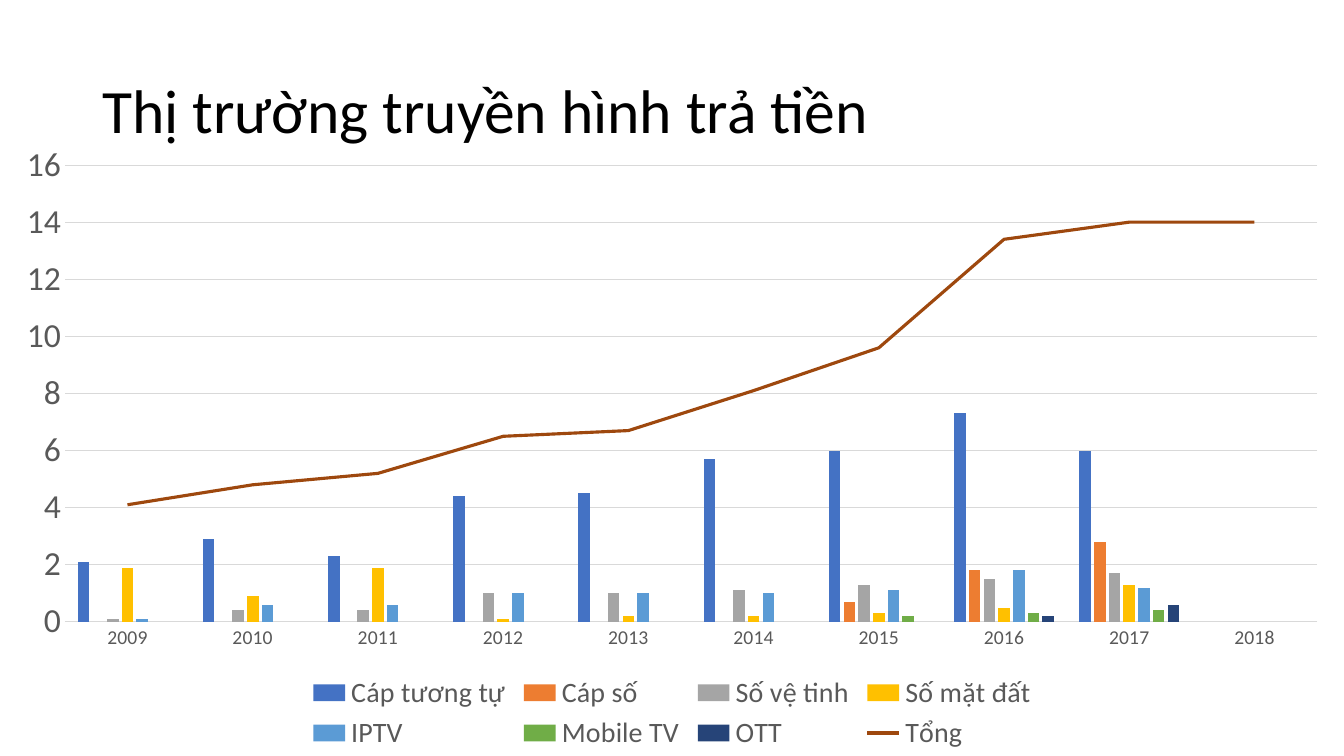
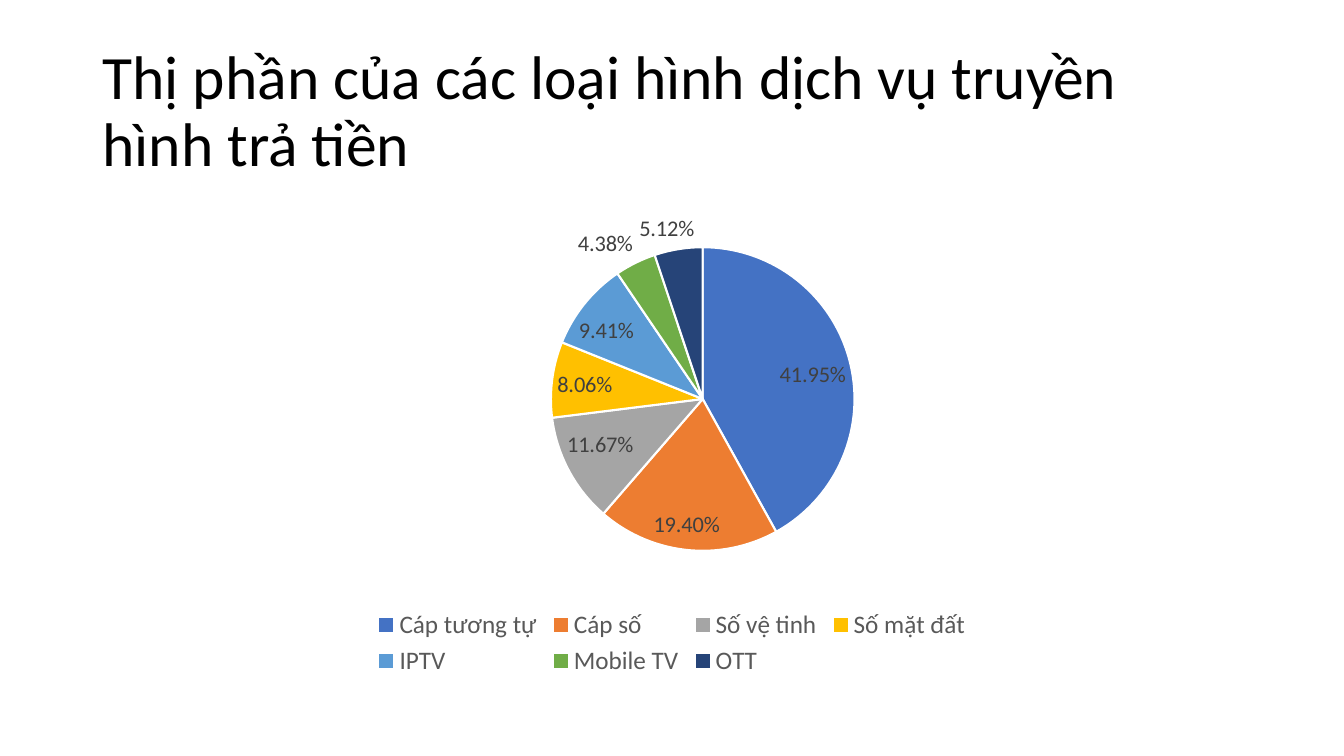
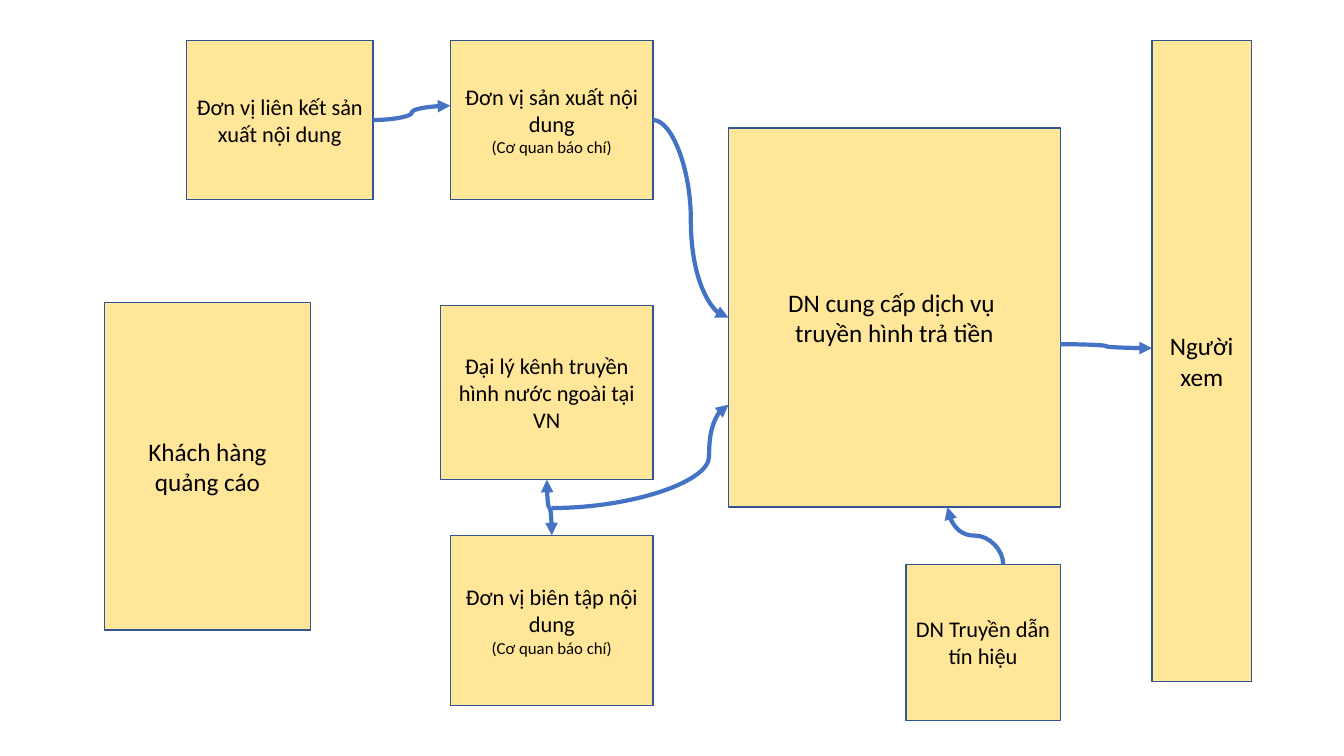
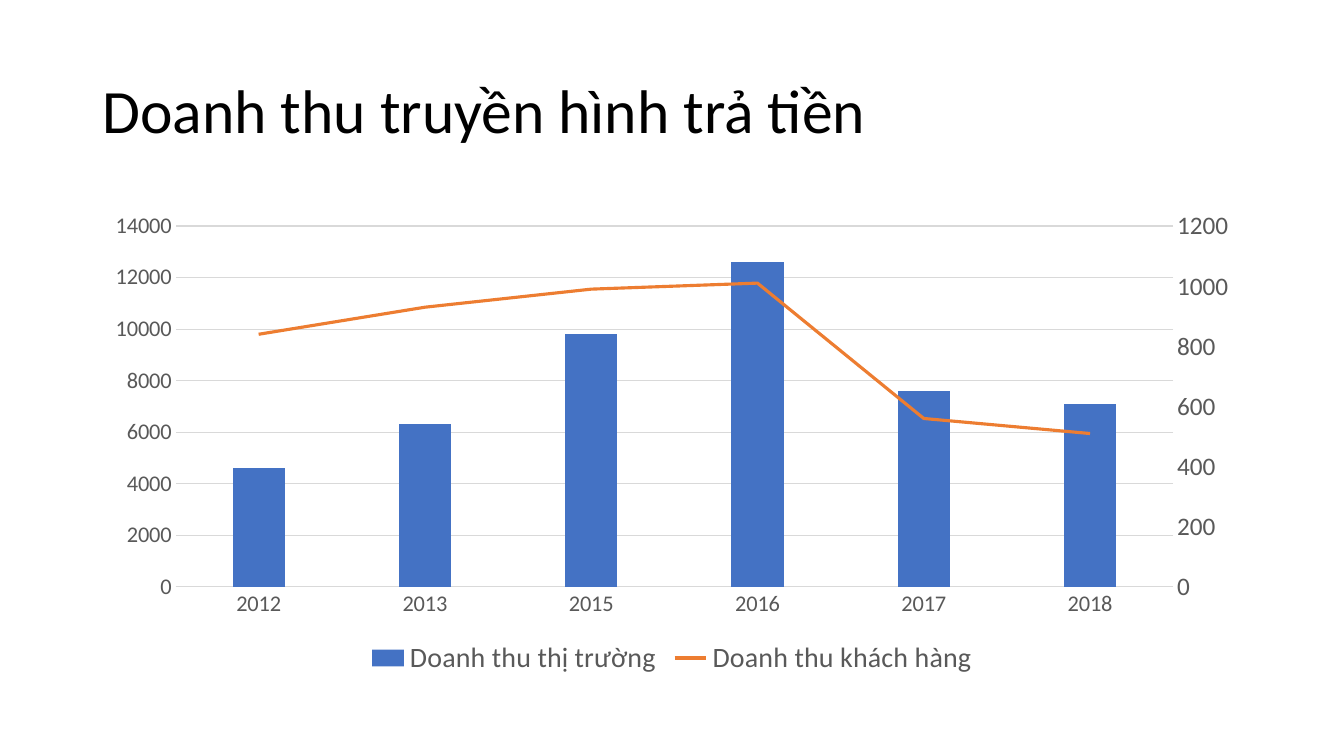
from copy import deepcopy

from pptx import Presentation
from pptx.chart.data import CategoryChartData as Data
from pptx.dml.color import RGBColor
from pptx.enum.chart import XL_CHART_TYPE as Kind
from pptx.enum.chart import XL_LABEL_POSITION as Spot
from pptx.enum.chart import XL_LEGEND_POSITION as Side
from pptx.enum.chart import XL_MARKER_STYLE as Marker
from pptx.enum.chart import XL_TICK_MARK as Tick
from pptx.enum.shapes import MSO_CONNECTOR, MSO_SHAPE
from pptx.enum.text import MSO_ANCHOR, PP_ALIGN
from pptx.oxml import parse_xml
from pptx.oxml.ns import nsdecls, qn
from pptx.util import Cm, Pt

FONT = "Calibri"
BLACK = RGBColor(0, 0, 0)
WHITE = RGBColor(0xFF, 0xFF, 0xFF)
GRAY = RGBColor(0x59, 0x59, 0x59)
DARK = RGBColor(0x40, 0x40, 0x40)
GRID = RGBColor(0xD9, 0xD9, 0xD9)
CREAM = RGBColor(0xFF, 0xE6, 0x99)
EDGE = RGBColor(0x32, 0x54, 0x91)
BLUE = RGBColor(0x44, 0x72, 0xC4)
ORANGE = RGBColor(0xED, 0x7D, 0x31)
BROWN = RGBColor(0x9E, 0x48, 0x0E)
PALETTE = [BLUE, ORANGE, RGBColor(0xA5, 0xA5, 0xA5), RGBColor(0xFF, 0xC0, 0),
           RGBColor(0x5B, 0x9B, 0xD5), RGBColor(0x70, 0xAD, 0x47),
           RGBColor(0x26, 0x44, 0x78)]

BODY = (2.33, 5.07, 29.21, 12.09)
KINDS = ["Cáp tương tự", "Cáp số", "Số vệ tinh", "Số mặt đất", "IPTV",
         "Mobile TV", "OTT"]
USERS = [
    [2.1, 2.9, 2.3, 4.4, 4.5, 5.7, 6, 7.3, 6, None],
    [None] * 6 + [0.7, 1.8, 2.8, None],
    [0.1, 0.4, 0.4, 1, 1, 1.1, 1.3, 1.5, 1.7, None],
    [1.9, 0.9, 1.9, 0.1, 0.2, 0.2, 0.3, 0.5, 1.3, None],
    [0.1, 0.6, 0.6, 1, 1, 1, 1.1, 1.8, 1.2, None],
    [None] * 6 + [0.2, 0.3, 0.4, None],
    [None] * 7 + [0.2, 0.6, None],
]
TOTAL = [4.1, 4.8, 5.2, 6.5, 6.7, 8.1, 9.6, 13.4, 14, 14]
SHARES = [0.4195, 0.194, 0.1167, 0.0806, 0.0941, 0.0438, 0.0512]

PRESS = "(Cơ quan báo chí)"
# name: left, top, width, height, text size, lines
BOXES = {
    "viewer": (29.03, 1.02, 2.51, 16.15, 18, "Người xem"),
    "provider": (18.36, 3.23, 8.36, 9.55, 18,
                 "DN cung cấp dịch vụ \vtruyền hình trả tiền"),
    "carrier": (22.83, 14.22, 3.89, 3.94, 16, "DN Truyền dẫn tín hiệu"),
    "maker": (11.35, 1.02, 5.11, 4.01, 16,
              "Đơn vị sản xuất nội dung\n" + PRESS),
    "partner": (4.7, 1.02, 4.7, 4.01, 16, "Đơn vị liên kết sản xuất nội dung"),
    "agent": (11.1, 7.7, 5.36, 4.39, 16,
              "Đại lý kênh truyền hình nước ngoài tại VN"),
    "editor": (11.35, 13.49, 5.11, 4.29, 16,
               "Đơn vị biên tập nội dung\n" + PRESS),
    "sponsor": (2.64, 7.62, 5.18, 8.26, 18, "Khách hàng quảng cáo"),
}
# Ends are a box and a share of its width and height
LINKS = [
    (("maker", 1, 0.5), ("provider", 0, 0.5), {}),
    (("agent", 0.5, 1), ("editor", 0.5, 0), {"turn": True, "both": True}),
    (("editor", 0.5, -0.16), ("provider", 0, 0.73), {"bend": 0.89}),
    (("carrier", 0.63, 0), ("provider", 0.66, 1), {"turn": True}),
    (("provider", 1, 0.57), ("viewer", 0, 0.48), {}),
    (("partner", 1, 0.5), ("maker", 0, 0.41), {}),
]
SITES = {(0.5, 0): 0, (0, 0.5): 1, (0.5, 1): 2, (1, 0.5): 3}


def style(font, size, color):
    font.name, font.size = FONT, Pt(size)
    font.color.rgb = color


def paint(fill, color):
    fill.solid()
    fill.fore_color.rgb = color


def stroke(line, color, width):
    line.color.rgb = color
    line.width = Pt(width)


def drop(node, tag):
    for child in node.findall(qn(tag)):
        node.remove(child)


def titled(deck, text):
    slide = deck.slides.add_slide(deck.slide_layouts[5])
    title = slide.shapes.title
    title.left, title.top = Cm(2.33), Cm(1.01)
    title.width, title.height = Cm(29.21), Cm(3.68)
    frame = title.text_frame
    frame.text = text
    frame.vertical_anchor = MSO_ANCHOR.MIDDLE
    para = frame.paragraphs[0]
    para.alignment, para.line_spacing = PP_ALIGN.LEFT, 0.9
    style(para.runs[0].font, 44, BLACK)
    return slide


def plot(slide, box, kind, cats, rows, size):
    """Add a chart with a clear ground and a legend below it."""
    data = Data()
    data.categories = cats
    for name, vals in rows:
        data.add_series(name, vals)
    chart = slide.shapes.add_chart(kind, *map(Cm, box), data).chart
    chart.has_title = False
    style(chart.font, 10, BLACK)
    chart._chartSpace.find(qn("c:txPr")).addprevious(parse_xml(
        f'<c:spPr {nsdecls("c", "a")}><a:noFill/>'
        '<a:ln><a:noFill/></a:ln></c:spPr>'))
    chart.has_legend = True
    chart.legend.position = Side.BOTTOM
    chart.legend.include_in_layout = False
    style(chart.legend.font, size, GRAY)
    return chart


def combo(slide, box, cats, rows, sizes, color):
    """Columns, with the last row drawn as a line."""
    chart = plot(slide, box, Kind.COLUMN_CLUSTERED, cats, rows, 20)
    bars = chart.plots[0]
    bars.gap_width, bars.overlap = 219, -27
    bars.vary_by_categories = False
    for axis, size in zip((chart.category_axis, chart.value_axis), sizes):
        axis.major_tick_mark = axis.minor_tick_mark = Tick.NONE
        style(axis.tick_labels.font, size, GRAY)
    stroke(chart.category_axis.format.line, GRID, 0.75)
    chart.value_axis.format.line.fill.background()
    chart.value_axis.has_major_gridlines = True
    stroke(chart.value_axis.major_gridlines.format.line, GRID, 0.75)

    base = bars._element
    lines = parse_xml(
        f'<c:lineChart {nsdecls("c")}><c:grouping val="standard"/>'
        '<c:varyColors val="0"/><c:marker val="1"/></c:lineChart>')
    row = base.findall(qn("c:ser"))[-1]
    drop(row, "c:invertIfNegative")
    lines.insert(2, row)
    for mark in base.findall(qn("c:axId")):
        lines.append(deepcopy(mark))
    base.addnext(lines)

    for ser, tint in zip(bars.series, PALETTE):
        paint(ser.format.fill, tint)
    trend = chart.plots[1].series[0]
    trend.smooth = False
    trend.marker.style = Marker.NONE
    stroke(trend.format.line, color, 2.25)
    return chart


def right_axis(chart, size):
    """Give the line its own scale at the right."""
    cat, val = chart.category_axis._element, chart.value_axis._element
    cat2, val2 = deepcopy(cat), deepcopy(val)
    val.addnext(val2)
    val2.addnext(cat2)
    for axis, own, other in ((cat2, "501", "502"), (val2, "502", "501")):
        axis.find(qn("c:axId")).set("val", own)
        axis.find(qn("c:crossAx")).set("val", other)
    cat2.find(qn("c:delete")).set("val", "1")
    drop(val2, "c:majorGridlines")
    val2.find(qn("c:axPos")).set("val", "r")
    val2.find(qn("c:crosses")).set("val", "max")
    for prop in val2.iter(qn("a:defRPr")):
        prop.set("sz", str(size * 100))
    marks = chart.plots[1]._element.findall(qn("c:axId"))
    for mark, own in zip(marks, ("501", "502")):
        mark.set("val", own)


def pie(slide, box):
    chart = plot(slide, box, Kind.PIE, KINDS, [("Series 1", SHARES)], 18)
    disc = chart.plots[0]
    disc.vary_by_categories = True
    for i, tint in enumerate(PALETTE):
        form = disc.series[0].points[i].format
        paint(form.fill, tint)
        stroke(form.line, WHITE, 1.5)
    disc.has_data_labels = True
    tags = disc.data_labels
    tags.show_value, tags.show_percentage = True, False
    tags.number_format, tags.number_format_is_linked = "0.00%", False
    tags.position = Spot.BEST_FIT
    style(tags.font, 16, DARK)


def block(slide, left, top, width, height, size, text):
    shape = slide.shapes.add_shape(
        MSO_SHAPE.RECTANGLE, Cm(left), Cm(top), Cm(width), Cm(height))
    shape.shadow.inherit = False
    paint(shape.fill, CREAM)
    stroke(shape.line, EDGE, 1)
    frame = shape.text_frame
    frame.word_wrap = True
    frame.vertical_anchor = MSO_ANCHOR.MIDDLE
    frame.text = text
    for para in frame.paragraphs:
        para.alignment = PP_ALIGN.CENTER
        for run in para.runs:
            style(run.font, 12 if run.text == PRESS else size, BLACK)
    return shape


def link(slide, shapes, start, end, turn=False, both=False, bend=None):
    """Curved arrow; turn makes it leave and arrive upright."""
    (x1, y1), (x2, y2) = [
        (shapes[name].left + int(shapes[name].width * fx),
         shapes[name].top + int(shapes[name].height * fy))
        for name, fx, fy in (start, end)]
    if turn:
        mx, my = (x1 + x2) // 2, (y1 + y2) // 2
        dx, dy = (x2 - x1) // 2, (y2 - y1) // 2
        x1, y1, x2, y2 = mx + dy, my - dx, mx - dy, my + dx
    arrow = slide.shapes.add_connector(MSO_CONNECTOR.CURVE, x1, y1, x2, y2)
    stroke(arrow.line, BLUE, 3)
    props = arrow._element.spPr
    if turn:
        props.find(qn("a:xfrm")).set("rot", str(270 * 60000))
    else:
        for (name, *spot), join in ((start, arrow.begin_connect),
                                    (end, arrow.end_connect)):
            if tuple(spot) in SITES:
                join(shapes[name], SITES[tuple(spot)])
    if bend:
        geom = props.find(qn("a:prstGeom"))
        drop(geom, "a:avLst")
        geom.append(parse_xml(
            f'<a:avLst {nsdecls("a")}><a:gd name="adj1" '
            f'fmla="val {round(bend * 100000)}"/></a:avLst>'))
    for tip in ("headEnd", "tailEnd") if both else ("tailEnd",):
        props.find(qn("a:ln")).append(
            parse_xml(f'<a:{tip} {nsdecls("a")} type="triangle"/>'))
    props.append(parse_xml(f'<a:effectLst {nsdecls("a")}/>'))


def diagram(slide):
    shapes = {name: block(slide, *spot) for name, spot in BOXES.items()}
    for start, end, form in LINKS:
        link(slide, shapes, start, end, **form)


def main():
    deck = Presentation()
    deck.slide_width, deck.slide_height = Cm(33.87), Cm(19.05)

    slide = titled(deck, "Thị trường truyền hình trả tiền")
    years = [str(year) for year in range(2009, 2019)]
    rows = [*zip(KINDS, USERS), ("Tổng", TOTAL)]
    combo(slide, (0, 3.33, 33.87, 15.72), years, rows, (14, 24), BROWN)

    pie(titled(deck, "Thị phần của các loại hình dịch vụ truyền hình trả tiền"),
        BODY)

    diagram(deck.slides.add_slide(deck.slide_layouts[6]))

    slide = titled(deck, "Doanh thu truyền hình trả tiền")
    rows = [("Doanh thu thị trường", [4600, 6300, 9800, 12600, 7600, 7100]),
            ("Doanh thu khách hàng", [840, 930, 990, 1010, 560, 510])]
    years = ["2012", "2013", "2015", "2016", "2017", "2018"]
    chart = combo(slide, BODY, years, rows, (16, 16), ORANGE)
    right_axis(chart, 18)

    deck.save("out.pptx")


if __name__ == "__main__":
    main()
